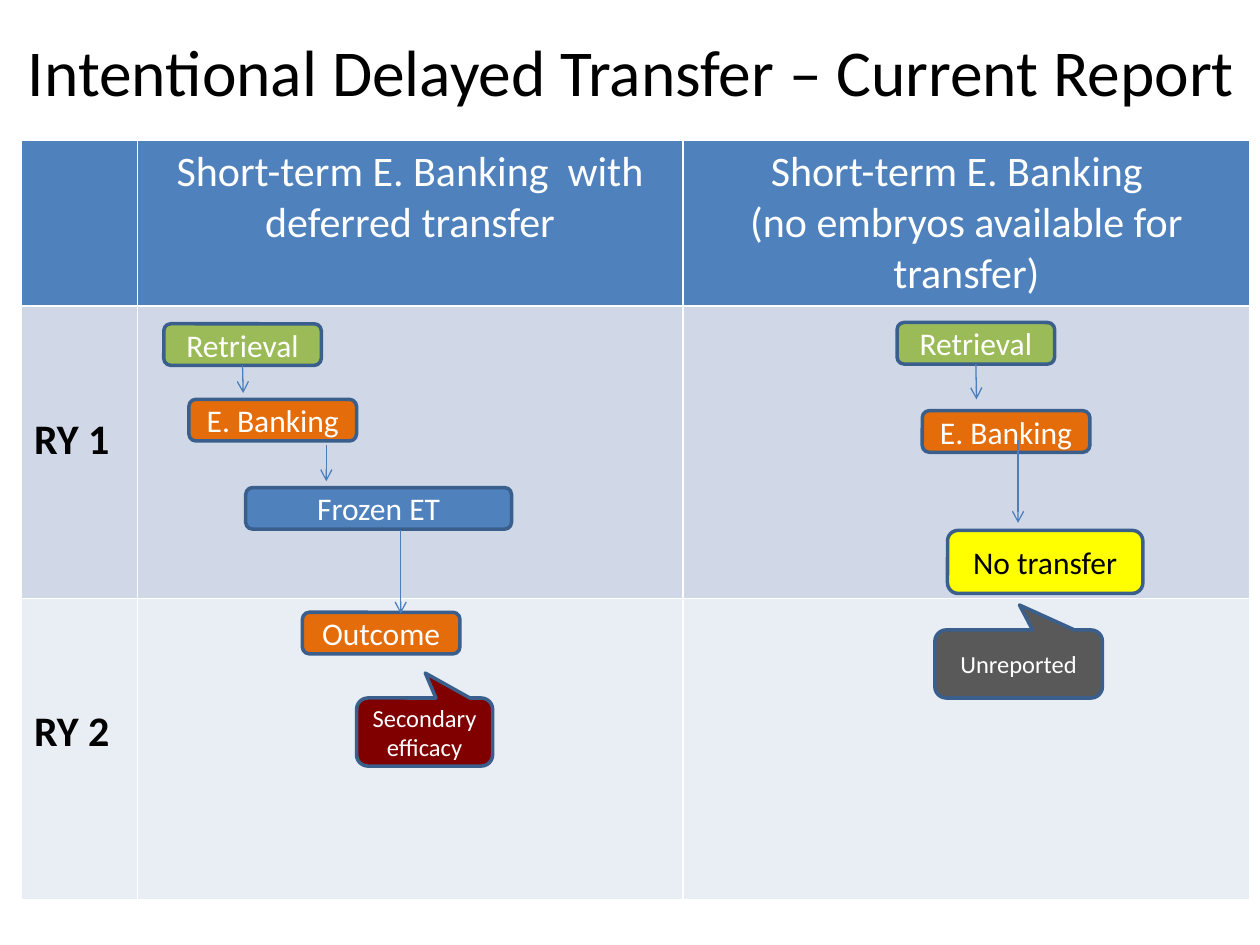
from dataclasses import dataclass

from lxml.etree import SubElement
from pptx import Presentation
from pptx.dml.color import RGBColor
from pptx.enum.shapes import MSO_CONNECTOR as Connector, MSO_SHAPE as Preset
from pptx.enum.text import MSO_ANCHOR as Anchor, PP_ALIGN as Align
from pptx.oxml import parse_xml
from pptx.oxml.ns import nsdecls, qn
from pptx.util import Inches, Pt

WHITE = RGBColor(0xFF, 0xFF, 0xFF)
BLACK = RGBColor(0, 0, 0)
BLUE = RGBColor(0x4F, 0x81, 0xBD)
OUTLINE = RGBColor(0x3A, 0x5F, 0x8C)
ARROW = RGBColor(0x4B, 0x7E, 0xBC)
GREEN = RGBColor(0x9B, 0xBB, 0x59)
ORANGE = RGBColor(0xE4, 0x6C, 0x0A)
YELLOW = RGBColor(0xFF, 0xFF, 0)
MAROON = RGBColor(0x80, 0, 0)
GREY = RGBColor(0x59, 0x59, 0x59)
YEAR_1_FILL = RGBColor(0xD0, 0xD8, 0xE8)
YEAR_2_FILL = RGBColor(0xE9, 0xED, 0xF4)
FONT = "Calibri"

# The slide is a grid of 100 columns by 75 rows
SLIDE_WIDTH, SLIDE_HEIGHT = Inches(10), Inches(7.5)
CELL = SLIDE_WIDTH // 100


def grid(count: float) -> int:
    return round(count * CELL)


@dataclass(frozen=True)
class Step:
    label: str
    left: float
    top: float
    width: float
    fill: RGBColor
    height: float = 3.3
    color: RGBColor = WHITE
    size: int = 18
    preset: Preset = Preset.ROUNDED_RECTANGLE


@dataclass(frozen=True)
class Arrow:
    column: float
    start: float
    end: float
    source: str = ""  # step whose bottom middle it leaves


@dataclass(frozen=True)
class Flow:
    steps: tuple[Step, ...]
    arrows: tuple[Arrow, ...]


CALLOUT = {"height": 5.4, "size": 14, "preset": Preset.ROUNDED_RECTANGULAR_CALLOUT}

FLOWS = (
    # Deferred transfer
    Flow(
        (
            Step("Retrieval", 13, 25.7, 12.5, GREEN),
            Step("E. Banking", 15, 31.7, 13.3, ORANGE),
            Step("Frozen ET", 19.5, 38.7, 21.1, BLUE),
            Step("Outcome", 24, 48.6, 12.5, ORANGE),
            Step("Secondary efficacy", 28.3, 55.4, 10.8, MAROON, **CALLOUT),
        ),
        (
            Arrow(19.3, 29, 31.2, "Retrieval"),
            Arrow(25.9, 35.3, 38.2),
            Arrow(31.8, 42.1, 48.7),
        ),
    ),
    # No embryos available
    Flow(
        (
            Step("Retrieval", 71.2, 25.6, 12.5, GREEN),
            Step("E. Banking", 73.2, 32.6, 13.3, ORANGE),
            Step("No transfer", 75.2, 42.1, 15.5, YELLOW, height=5, color=BLACK),
            Step("Unreported", 74.2, 50, 13.3, GREY, **CALLOUT),
        ),
        (
            Arrow(77.5, 28.9, 31.7, "Retrieval"),
            Arrow(80.8, 34.9, 41.5),
        ),
    ),
)

COLUMNS = (9.2, 43.3, 45)
ROWS = (13.2, 23.2, 23.9)
ROW_FILLS = (BLUE, YEAR_1_FILL, YEAR_2_FILL)
CELL_TEXTS = (
    ("", "Short-term E. Banking  with deferred transfer",
     "Short-term E. Banking  \n(no embryos available for transfer)"),
    ("RY 1", "", ""),
    ("RY 2", "", ""),
)


def write(frame, text: str, size: float, color: RGBColor,
          align: Align = Align.CENTER, bold: bool = False) -> None:
    frame.word_wrap = True
    frame.text = text
    for paragraph in frame.paragraphs:
        paragraph.alignment = align
        font = paragraph.font
        font.name, font.size, font.bold = FONT, Pt(size), bold
        font.color.rgb = color


def add_borders(cell) -> None:
    properties = cell._tc.get_or_add_tcPr()
    for index, side in enumerate("LRTB"):
        properties.insert(index, parse_xml(
            f'<a:ln{side} {nsdecls("a")} w="{Pt(1)}"><a:solidFill>'
            f'<a:srgbClr val="{WHITE}"/></a:solidFill></a:ln{side}>'))


def add_report_table(shapes) -> None:
    table = shapes.add_table(len(ROWS), len(COLUMNS), grid(1.7), grid(11.1),
                             grid(sum(COLUMNS)), grid(sum(ROWS))).table
    for column, width in zip(table.columns, COLUMNS):
        column.width = grid(width)
    for number, (row, height) in enumerate(zip(table.rows, ROWS)):
        row.height = grid(height)
        header = number == 0
        for cell, text in zip(row.cells, CELL_TEXTS[number]):
            cell.fill.solid()
            cell.fill.fore_color.rgb = ROW_FILLS[number]
            add_borders(cell)
            if header:
                write(cell.text_frame, text, 24, WHITE)
            else:
                cell.margin_top = grid(8.6)
                write(cell.text_frame, text, 24, BLACK, Align.LEFT, bold=True)


def add_step(shapes, step: Step):
    box = shapes.add_shape(step.preset, grid(step.left), grid(step.top),
                           grid(step.width), grid(step.height))
    box.shadow.inherit = False
    box.fill.solid()
    box.fill.fore_color.rgb = step.fill
    box.line.color.rgb = OUTLINE
    box.line.width = Pt(2)
    if step.preset == Preset.ROUNDED_RECTANGULAR_CALLOUT:
        box.adjustments[0], box.adjustments[1] = 0.005, -0.867
    box.text_frame.vertical_anchor = Anchor.MIDDLE
    write(box.text_frame, step.label, step.size, step.color)
    return box


def add_arrow(shapes, arrow: Arrow, boxes: dict) -> None:
    line = shapes.add_connector(Connector.STRAIGHT, grid(arrow.column), grid(arrow.start),
                                grid(arrow.column), grid(arrow.end))
    if arrow.source:
        line.begin_connect(boxes[arrow.source], 2)
    line.line.color.rgb = ARROW
    line.line.width = Pt(0.75)
    SubElement(line.line._get_or_add_ln(), qn("a:tailEnd"), type="arrow")
    SubElement(line._element.spPr, qn("a:effectLst"))


def add_title(shapes) -> None:
    title = shapes.add_textbox(grid(0.3), grid(1.7), grid(99.7), grid(9.2)).text_frame
    title.margin_top = grid(0.8)
    write(title, "Intentional Delayed Transfer – Current Report", 37.4, BLACK)


def main() -> None:
    deck = Presentation()
    deck.slide_width, deck.slide_height = SLIDE_WIDTH, SLIDE_HEIGHT
    shapes = deck.slides.add_slide(deck.slide_layouts[6]).shapes

    add_report_table(shapes)
    for flow in FLOWS:
        boxes = {step.label: add_step(shapes, step) for step in flow.steps}
        for arrow in flow.arrows:
            add_arrow(shapes, arrow, boxes)
    add_title(shapes)

    deck.save("out.pptx")


if __name__ == "__main__":
    main()
